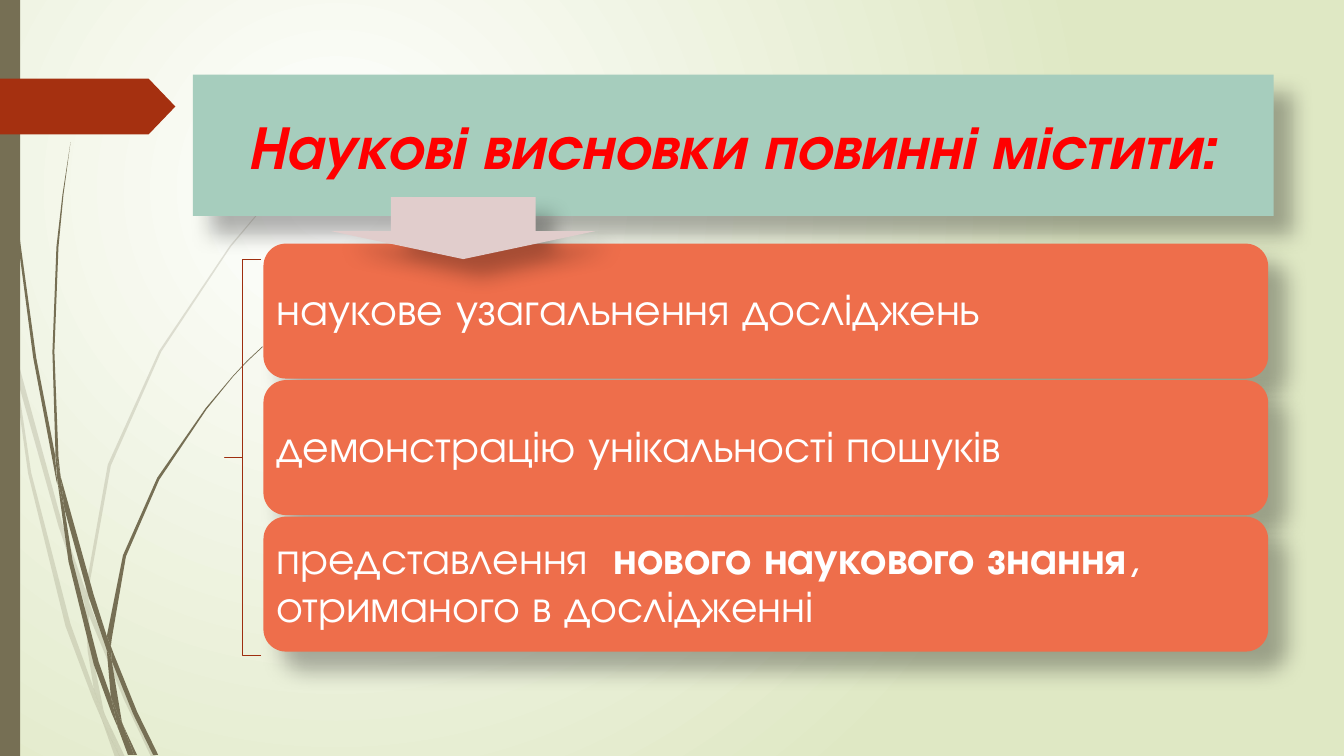
from lxml.etree import SubElement
from pptx import Presentation
from pptx.dml.color import RGBColor
from pptx.enum.shapes import MSO_SHAPE
from pptx.enum.text import MSO_ANCHOR, MSO_AUTO_SIZE, PP_ALIGN
from pptx.oxml.ns import qn
from pptx.util import Cm, Pt

FONT = "TeX Gyre Adventor"
OLIVE = "766F54"
GRASS_UNIT = Cm(0.0254)

# Outlines of the grass blades, as corners in grass units
PALE_BLADES = [
    [(11, 350), (9, 322), (0, 282), (0, 299), (10, 344)],
    [(58, 522), (84, 599), (85, 586), (62, 520), (14, 345), (17, 376)],
    [(92, 607), (88, 596), (88, 610), (123, 694), (150, 751), (155, 751), (127, 692)],
    [(119, 751), (124, 751), (105, 711)],
    [(93, 683), (70, 619), (31, 469), (17, 376), (11, 350), (28, 470), (65, 621),
     (92, 693), (101, 714), (99, 707)],
    [(84, 599), (87, 646), (93, 683), (96, 692), (105, 711), (103, 706), (91, 646),
     (88, 610), (88, 608)],
    [(88, 584), (110, 462), (160, 349), (229, 245), (268, 198), (290, 175), (312, 154),
     (312, 153), (289, 175), (268, 197), (228, 244), (158, 348), (107, 461), (85, 584),
     (85, 586), (88, 596)],
    [(101, 714), (114, 751), (119, 751)],
    [(88, 608), (88, 610), (88, 596), (85, 586), (84, 599)],
    [(96, 692), (93, 683), (99, 707), (101, 714), (119, 751), (105, 711)],
]
DARK_BLADES = [
    [(7, 110), (17, 233), (33, 355), (56, 477), (57, 481), (55, 457), (55, 453),
     (36, 355), (19, 232), (8, 109), (5, 48), (4, 0), (3, 0), (4, 48)],
    [(88, 592), (106, 645), (106, 633), (106, 631), (93, 590), (60, 472), (64, 505)],
    [(113, 649), (110, 641), (111, 656), (132, 708), (152, 749), (157, 749), (136, 706)],
    [(110, 691), (98, 657), (72, 556), (64, 505), (57, 477), (68, 557), (93, 659),
     (111, 708), (117, 722), (116, 717)],
    [(60, 472), (58, 453), (54, 349), (58, 245), (63, 193), (70, 141), (62, 193),
     (56, 245), (52, 349), (55, 449)],
    [(133, 749), (136, 749), (122, 719)],
    [(57, 477), (64, 505), (60, 472), (55, 449), (55, 453)],
    [(111, 633), (125, 552), (158, 476), (205, 406), (231, 374), (245, 359), (261, 344),
     (260, 344), (245, 358), (231, 373), (204, 405), (156, 474), (122, 551), (106, 631),
     (110, 641)],
    [(117, 722), (127, 749), (131, 749)],
    [(106, 645), (110, 691), (116, 706), (122, 719), (121, 716), (111, 656), (109, 651)],
    [(106, 645), (109, 651), (111, 656), (110, 641), (106, 631), (106, 633)],
    [(116, 706), (110, 691), (116, 717), (117, 722), (130, 749), (133, 749), (122, 719)],
]
CONCLUSIONS = [
    [("наукове узагальнення досліджень", False)],
    [("демонстрацію унікальності пошуків", False)],
    [("представлення  ", False), ("нового наукового знання", True),
     (", отриманого в дослідженні", False)],
]


def colour(code):
    return RGBColor.from_string(code)


def paint(shape, code, opacity=100):
    """Fill the shape without outline or shadow."""
    shape.fill.solid()
    shape.fill.fore_color.rgb = colour(code)
    shape.line.fill.background()
    shape.shadow.inherit = False
    if opacity < 100:
        fill = shape.element.spPr.find(qn("a:solidFill"))
        SubElement(fill[0], qn("a:alpha"), val=str(opacity * 1000))


def cast_shadow(shape):
    effects = shape.element.spPr.find(qn("a:effectLst"))
    shadow = SubElement(effects, qn("a:outerShdw"), blurRad=str(Pt(15)),
                        dist=str(Pt(18)), dir="2700000", algn="tl", rotWithShape="0")
    black = SubElement(shadow, qn("a:srgbClr"), val="000000")
    SubElement(black, qn("a:alpha"), val="30000")


def add_block(page, kind, left, top, width, height, code, shadow=False):
    block = page.shapes.add_shape(kind, Cm(left), Cm(top), Cm(width), Cm(height))
    paint(block, code)
    if shadow:
        cast_shadow(block)
    return block


def write(shape, spans, size, code, align=PP_ALIGN.LEFT, italic=False,
          spacing=None, inset=None):
    """Write spans of (text, bold) as one paragraph, centred vertically."""
    frame = shape.text_frame
    frame.word_wrap = True
    frame.auto_size = MSO_AUTO_SIZE.NONE
    frame.vertical_anchor = MSO_ANCHOR.MIDDLE
    if inset is not None:
        frame.margin_left = frame.margin_right = Cm(inset)
        frame.margin_top = frame.margin_bottom = Cm(inset)
    para = frame.paragraphs[0]
    para.alignment = align
    para.line_spacing = spacing
    for text, bold in spans:
        span = para.add_run()
        span.text = text
        font = span.font
        font.name, font.size, font.bold, font.italic = FONT, Pt(size), bold, italic
        font.color.rgb = colour(code)


def add_blade(page, corners, opacity):
    outline = [(x * GRASS_UNIT, y * GRASS_UNIT) for x, y in corners]
    builder = page.shapes.build_freeform(*outline[0])
    builder.add_line_segments(outline[1:], close=True)
    paint(builder.convert_to_shape(), OLIVE, opacity)


def set_background(page):
    fill = page.background.fill
    fill.gradient()
    for stop, position, code in zip(fill.gradient_stops, (0, 1), ("FFFFFF", "DFE8C4")):
        stop.position = position
        stop.color.rgb = colour(code)
    gradient = page.element.find(".//" + qn("a:gradFill"))
    linear = gradient.find(qn("a:lin"))
    if linear is not None:
        gradient.remove(linear)
    circle = SubElement(gradient, qn("a:path"), path="circle")
    SubElement(circle, qn("a:fillToRect"), l="50000", t="50000", r="100000", b="100000")


def add_title(page, text):
    title = page.shapes.title
    title.element.getparent().append(title.element)  # in front of the grass
    title.left, title.top, title.width, title.height = Cm(4.86), Cm(1.88), Cm(27.24), Cm(3.56)
    paint(title, "A6CDBD")
    cast_shadow(title)
    write(title, [(text, True)], 44, "FF0000", align=PP_ALIGN.CENTER, italic=True)


def add_conclusion(page, row, spans):
    place = (6.64, 6.14 + row * 3.44, 25.32, 3.4)
    add_block(page, MSO_SHAPE.ROUNDED_RECTANGLE, *place, "EE6E4B", shadow=True)
    box = page.shapes.add_textbox(*map(Cm, place))
    write(box, spans, 32, "FFFFFF", spacing=0.9, inset=0.33)


def add_bracket(page):
    bracket = page.shapes.add_shape(MSO_SHAPE.LEFT_BRACE, Cm(5.66), Cm(6.53), Cm(0.92), Cm(9.98))
    bracket.adjustments[0] = 0
    bracket.fill.background()
    bracket.line.color.rgb = colour("9E2E0F")
    bracket.line.width = Pt(0.75)
    bracket.shadow.inherit = False


def main():
    deck = Presentation()
    deck.slide_width, deck.slide_height = Cm(33.87), Cm(19.05)
    page = deck.slides.add_slide(deck.slide_layouts[5])
    set_background(page)

    for blades, opacity in ((PALE_BLADES, 20), (DARK_BLADES, 100)):
        for corners in blades:
            add_blade(page, corners, opacity)
    add_block(page, MSO_SHAPE.RECTANGLE, 0, 0, 0.51, 19.05, OLIVE)
    marker = add_block(page, MSO_SHAPE.PENTAGON, 0, 1.98, 4.42, 1.41, "A53010")
    marker.adjustments[0] = 0.48

    add_title(page, "Наукові висновки повинні містити:")
    for row, spans in enumerate(CONCLUSIONS):
        add_conclusion(page, row, spans)
    add_bracket(page)
    arrow = add_block(page, MSO_SHAPE.DOWN_ARROW, 8.36, 4.97, 6.63, 1.56,
                      "E1CDCC", shadow=True)
    arrow.adjustments[0], arrow.adjustments[1] = 0.55, 0.45
    deck.save("out.pptx")


if __name__ == "__main__":
    main()
